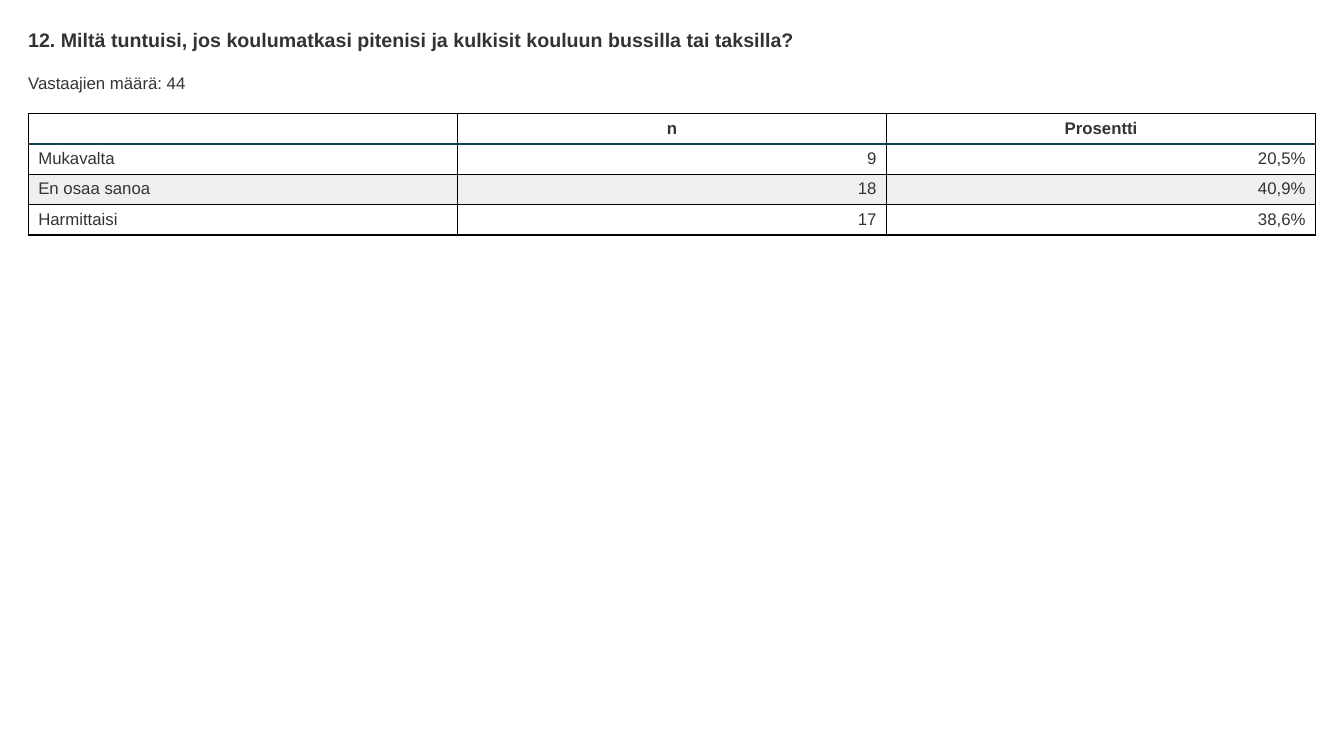
from lxml import etree
from pptx import Presentation
from pptx.dml.color import RGBColor
from pptx.enum.text import MSO_ANCHOR, PP_ALIGN
from pptx.oxml.ns import qn
from pptx.util import Inches, Pt

LEFT, MID, RIGHT = PP_ALIGN.LEFT, PP_ALIGN.CENTER, PP_ALIGN.RIGHT
TOP = MSO_ANCHOR.TOP
INK, TEAL, BLACK, WHITE, GREY = "333333", "124456", "000000", "FFFFFF", "EFEFEF"


def style(para, size, bold=False):
    for run in para.runs:
        font = run.font
        font.name, font.size, font.bold = "Arial", Pt(size), bold
        font.color.rgb = RGBColor.from_string(INK)


def border(cell, side, color, width):
    props = cell._tc.get_or_add_tcPr()
    line = etree.SubElement(props, qn("a:ln" + side), w=str(Pt(width)))
    fill = etree.SubElement(line, qn("a:solidFill"))
    etree.SubElement(fill, qn("a:srgbClr"), val=color)


deck = Presentation()
deck.slide_width, deck.slide_height = Inches(13.33), Inches(7.5)
slide = deck.slides.add_slide(deck.slide_layouts[6])
edge = Inches(0.28)
width = deck.slide_width - 2 * edge

heads = [
    ("12. Miltä tuntuisi, jos koulumatkasi pitenisi ja kulkisit kouluun bussilla tai taksilla?",
     0.28, 0.23, 14, True),
    ("Vastaajien määrä: 44", 0.72, 0.2, 12, False),
]
for text, top, height, size, bold in heads:
    box = slide.shapes.add_textbox(edge, Inches(top), width, Inches(height))
    frame = box.text_frame
    frame.word_wrap = True
    frame.margin_left = frame.margin_right = frame.margin_top = frame.margin_bottom = 0
    frame.text = text
    style(frame.paragraphs[0], size, bold)

rows = [
    ("", "n", "Prosentti"),
    ("Mukavalta", "9", "20,5%"),
    ("En osaa sanoa", "18", "40,9%"),
    ("Harmittaisi", "17", "38,6%"),
]
high = Inches(0.3)
table = slide.shapes.add_table(
    len(rows), len(rows[0]), edge, Inches(1.13), width, high * len(rows)).table
table.first_row = table.horz_banding = False
for row, texts in enumerate(rows):
    table.rows[row].height = high
    for col, text in enumerate(texts):
        cell = table.cell(row, col)
        for side in "LRTB":
            rule = (row, side) in ((0, "B"), (1, "T"))
            border(cell, side, TEAL if rule else BLACK, 2 if rule else 1)
        cell.fill.solid()
        cell.fill.fore_color.rgb = RGBColor.from_string(GREY if row == 2 else WHITE)
        cell.vertical_anchor = TOP
        para = cell.text_frame.paragraphs[0]
        if text:
            para.text = text
            para.alignment = MID if row == 0 else RIGHT if col else LEFT
            style(para, 12, row == 0)
        else:
            etree.SubElement(para._p, qn("a:endParaRPr"), sz="1200")

deck.save("out.pptx")
